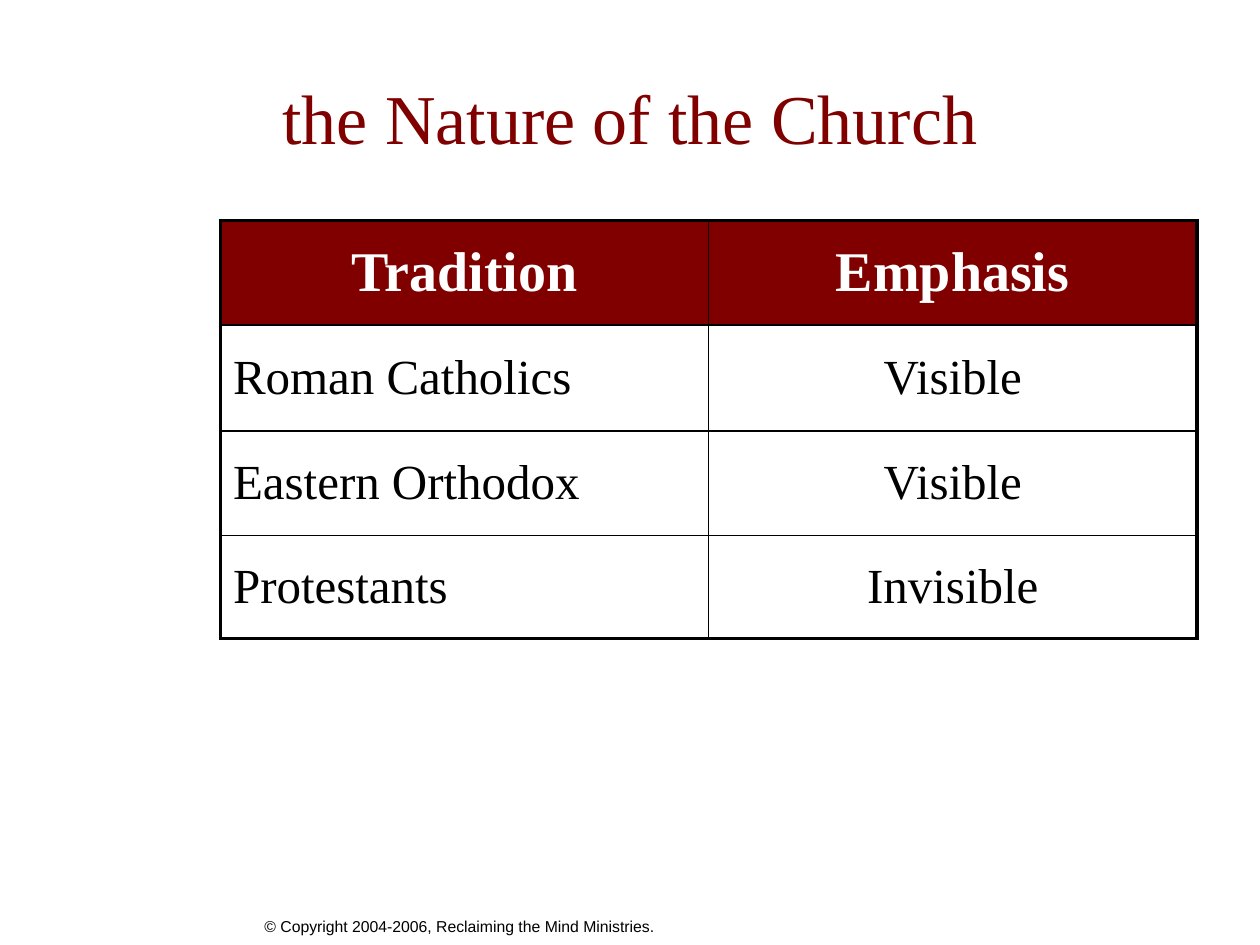
from lxml import etree
from pptx import Presentation
from pptx.dml.color import RGBColor
from pptx.enum.text import MSO_ANCHOR, PP_ALIGN
from pptx.oxml.ns import qn
from pptx.util import Inches, Pt

LEFT, CENTER = PP_ALIGN.LEFT, PP_ALIGN.CENTER
TOP, MIDDLE = MSO_ANCHOR.TOP, MSO_ANCHOR.MIDDLE
TITLE_ONLY = 5
WIDE, HIGH = 10, 7.5
SERIF, SANS = "Times New Roman", "Arial"
COLORS = {"maroon": "800000", "white": "FFFFFF", "black": "000000"}
THICK, THIN = 2.25, 1

ROWS = [
    ("Tradition", "Emphasis"),
    ("Roman Catholics", "Visible"),
    ("Eastern Orthodox", "Visible"),
    ("Protestants", "Invisible"),
]
HEIGHTS = [0.83, 0.84, 0.83, 0.82]


def place(left, top, width, height):
    return [Inches(n) for n in (left, top, width, height)]


def write(frame, text, size, font=SERIF, color="black", bold=False,
          align=LEFT, anchor=MIDDLE):
    frame.word_wrap = True
    frame.vertical_anchor = anchor
    para = frame.paragraphs[0]
    para.alignment = align
    para.space_before = Pt(0)
    run = para.add_run()
    run.text = text
    run.font.size = Pt(size)
    run.font.name = font
    run.font.bold = bold
    run.font.color.rgb = RGBColor.from_string(COLORS[color])


def add_edge(cell, side, width):
    props = cell._tc.get_or_add_tcPr()
    line = etree.SubElement(props, qn(f"a:ln{side}"), w=str(Pt(width)))
    fill = etree.SubElement(line, qn("a:solidFill"))
    etree.SubElement(fill, qn("a:srgbClr"), val=COLORS["black"])


def add_title(slide, text):
    title = slide.shapes.title
    title.left, title.top, title.width, title.height = place(
        0.05 * WIDE, 0.04 * HIGH, 0.9 * WIDE, 1.25)
    write(title.text_frame, text, 40, color="maroon", align=CENTER)


def add_grid(slide, rows):
    last_row, last_col = len(rows) - 1, len(rows[0]) - 1
    table = slide.shapes.add_table(
        len(rows), len(rows[0]), *place(1.75, 1.75, 7.75, sum(HEIGHTS))).table
    table.first_row = table.horz_banding = False
    for r, row in enumerate(rows):
        table.rows[r].height = Inches(HEIGHTS[r])
        for c, text in enumerate(row):
            cell = table.cell(r, c)
            head = r == 0
            write(cell.text_frame, text, 32 if head else 28, bold=head,
                  color="white" if head else "black",
                  align=CENTER if head or c else LEFT)
            cell.vertical_anchor = MIDDLE
            # Thick frame around the table, thin lines inside
            outer = {"L": c == 0, "R": c == last_col,
                     "T": r == 0, "B": r == last_row}
            for side, thick in outer.items():
                add_edge(cell, side, THICK if thick else THIN)
            if head:
                cell.fill.solid()
                cell.fill.fore_color.rgb = RGBColor.from_string(COLORS["maroon"])
            else:
                cell.fill.background()


def add_footer(slide, text):
    box = slide.shapes.add_textbox(*place(0.2 * WIDE, 7.23, WIDE / 3, 0.52))
    write(box.text_frame, text, 9, font=SANS, anchor=TOP)


def main():
    deck = Presentation()
    deck.slide_width, deck.slide_height = Inches(WIDE), Inches(HIGH)
    slide = deck.slides.add_slide(deck.slide_layouts[TITLE_ONLY])
    add_footer(slide, "© Copyright 2004-2006, Reclaiming the Mind Ministries.")
    add_title(slide, "the Nature of the Church")
    add_grid(slide, ROWS)
    deck.save("out.pptx")


if __name__ == "__main__":
    main()
